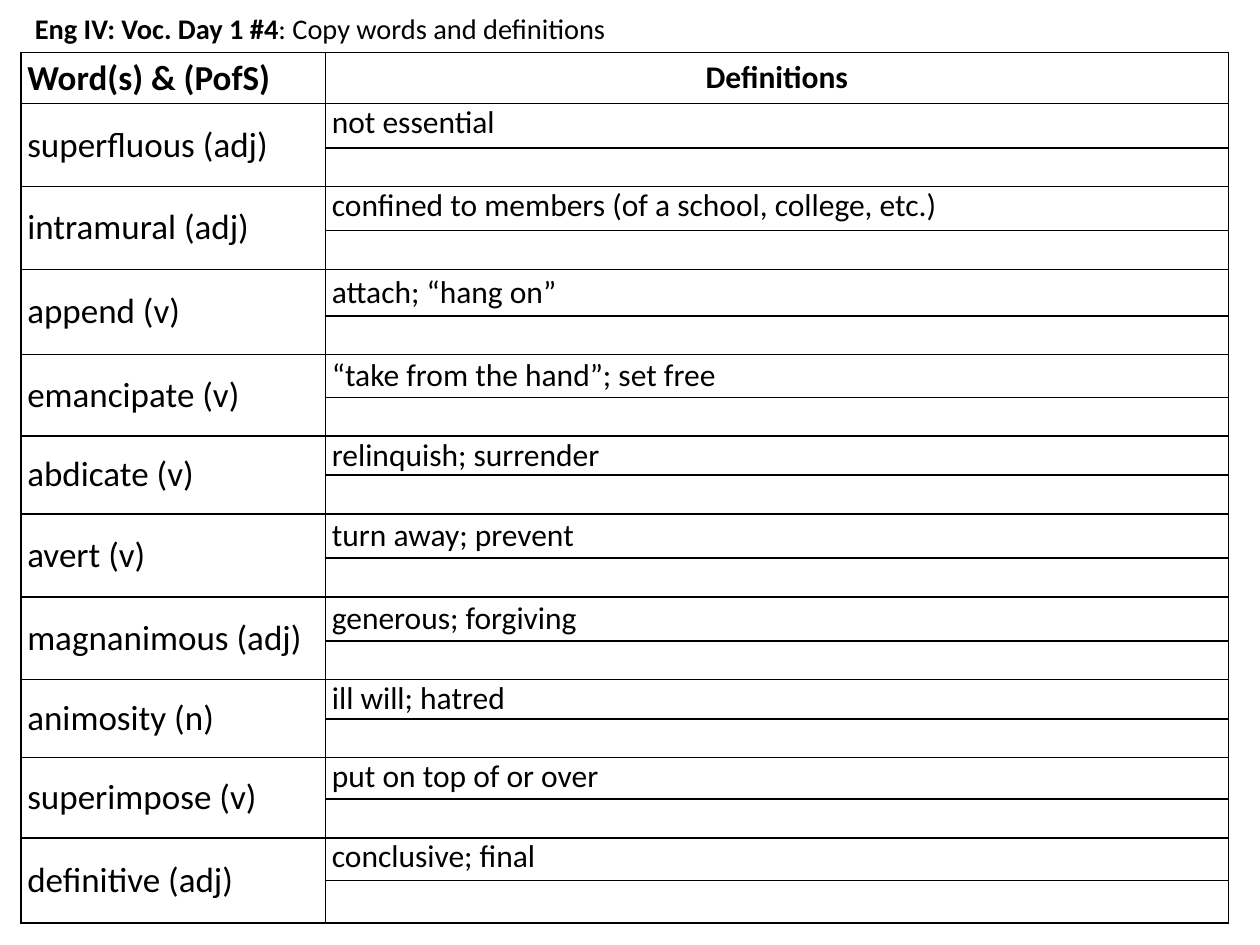
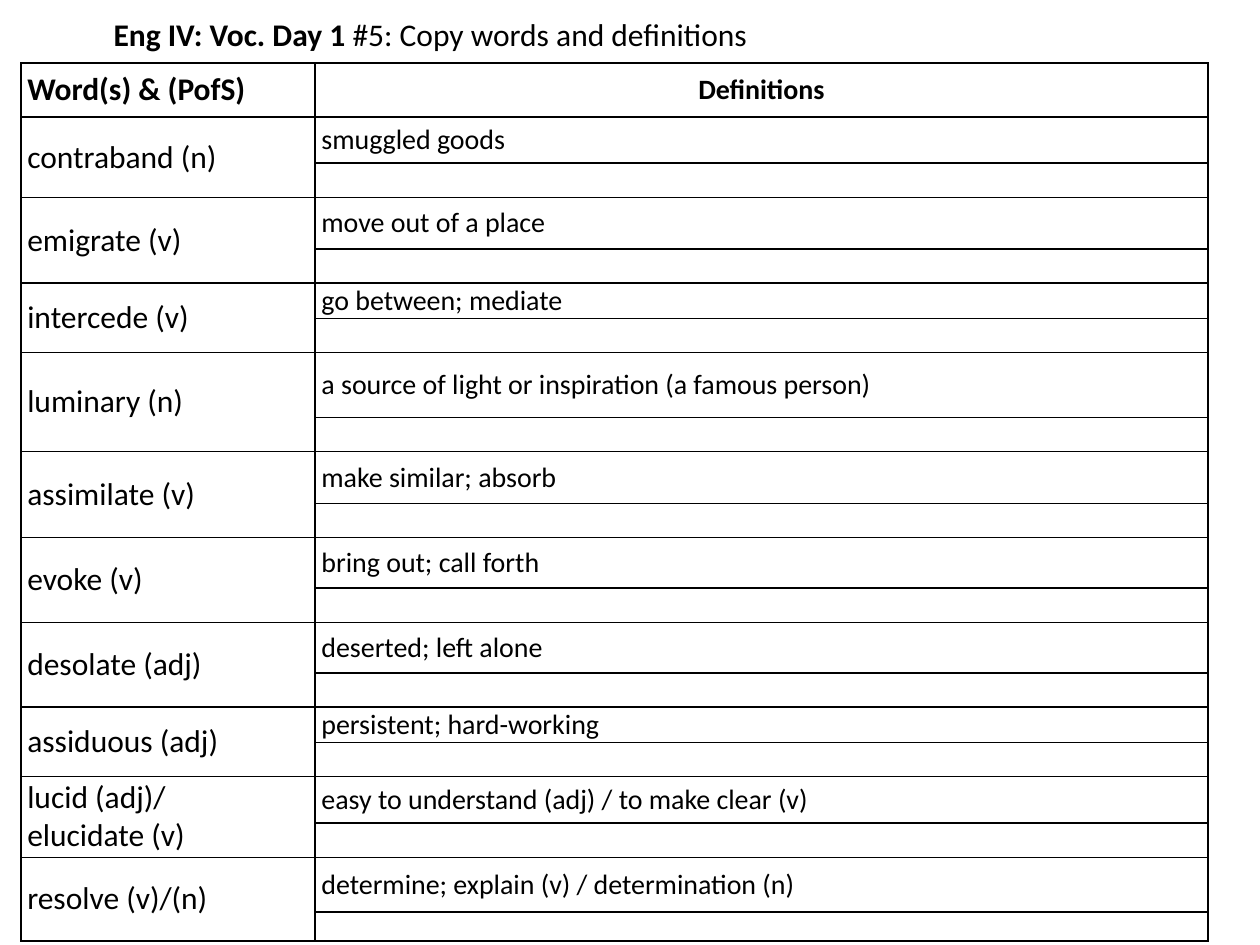
from dataclasses import dataclass

from lxml.etree import SubElement
from pptx import Presentation
from pptx.dml.color import RGBColor
from pptx.enum.text import MSO_ANCHOR, PP_ALIGN
from pptx.oxml.ns import qn
from pptx.presentation import Presentation as Deck
from pptx.slide import Slide
from pptx.table import Table, _Cell
from pptx.text.text import TextFrame
from pptx.util import Cm, Pt


@dataclass(frozen=True)
class Theme:
    font: str = "Calibri"
    ink: str = "000000"
    paper: str = "FFFFFF"
    border_pt: float = 1
    blank_pt: float = 12
    side_margin: float = 0.13


@dataclass(frozen=True)
class Entry:
    word: str
    definition: str
    height: float
    anchor: MSO_ANCHOR = MSO_ANCHOR.MIDDLE


@dataclass(frozen=True)
class Lesson:
    heading: str
    instruction: str
    heading_width: float
    heading_height: float
    heading_pt: float
    top: float
    word_width: float
    definition_width: float
    word_pt: float
    definition_pt: float
    header_height: float
    blank_height: float
    last_blank_height: float
    entries: tuple[Entry, ...]


THEME = Theme()
TABLE_LEFT = 0.42
TOP = MSO_ANCHOR.TOP

LESSONS = (
    Lesson(
        heading="Eng IV: Voc. Day 1 #4",
        instruction=": Copy words and definitions",
        heading_width=12.9,
        heading_height=1.14,
        heading_pt=16.2,
        top=1.06,
        word_width=6.14,
        definition_width=18.2,
        word_pt=20,
        definition_pt=18,
        header_height=1.03,
        blank_height=0.78,
        last_blank_height=0.86,
        entries=(
            Entry("superfluous (adj)", "not essential", 0.89, TOP),
            Entry("intramural (adj)", "confined to members (of a school, college, etc.)", 0.89, TOP),
            Entry("append (v)", "attach; “hang on”", 0.94),
            Entry("emancipate (v)", "“take from the hand”; set free", 0.86),
            Entry("abdicate (v)", "relinquish; surrender", 0.79),
            Entry("avert (v)", "turn away; prevent", 0.89),
            Entry("magnanimous (adj)", "generous; forgiving", 0.89),
            Entry("animosity (n)", "ill will; hatred", 0.79, TOP),
            Entry("superimpose (v)", "put on top of or over", 0.84, TOP),
            Entry("definitive (adj)", "conclusive; final", 0.86, TOP),
        ),
    ),
    Lesson(
        heading="Eng IV: Voc. Day 1",
        instruction=" #5: Copy words and definitions",
        heading_width=17.35,
        heading_height=1.35,
        heading_pt=18,
        top=1.27,
        word_width=5.93,
        definition_width=18,
        word_pt=18,
        definition_pt=16,
        header_height=1.09,
        blank_height=0.69,
        last_blank_height=0.59,
        entries=(
            Entry("contraband (n)", "smuggled goods", 0.93),
            Entry("emigrate (v)", "move out of a place", 1.04),
            Entry("intercede (v)", "go between; mediate", 0.71),
            Entry("luminary (n)", "a source of light or inspiration (a famous person)", 1.31),
            Entry("assimilate (v)", "make similar; absorb", 1.04),
            Entry("evoke (v)", "bring out; call forth", 1.02),
            Entry("desolate (adj)", "deserted; left alone", 1.02),
            Entry("assiduous (adj)", "persistent; hard-working", 0.71),
            Entry("lucid (adj)/\nelucidate (v)", "easy to understand (adj) / to make clear (v)", 0.94),
            Entry("resolve (v)/(n)", "determine; explain (v) / determination (n)", 1.1),
        ),
    ),
)


def write(
    frame: TextFrame,
    text: str,
    *,
    size: float,
    bold: bool = False,
    align: PP_ALIGN = PP_ALIGN.LEFT,
) -> None:
    for index, line in enumerate(text.split("\n")):
        paragraph = frame.add_paragraph() if index else frame.paragraphs[0]
        paragraph.alignment = align
        run = paragraph.add_run()
        run.text = line
        run.font.name = THEME.font
        run.font.size = Pt(size)
        run.font.bold = bold
        run.font.color.rgb = RGBColor.from_string(THEME.ink)


def prepare_cell(cell: _Cell) -> None:
    cell.margin_left = cell.margin_right = Cm(THEME.side_margin)
    cell.margin_top = cell.margin_bottom = Cm(0)
    cell.vertical_anchor = MSO_ANCHOR.MIDDLE
    properties = cell._tc.get_or_add_tcPr()
    for side in ("a:lnL", "a:lnR", "a:lnT", "a:lnB"):
        border = SubElement(properties, qn(side), w=str(Pt(THEME.border_pt)))
        SubElement(SubElement(border, qn("a:solidFill")), qn("a:srgbClr"), val=THEME.ink)
    cell.fill.background()


def shrink_blank(cell: _Cell) -> None:
    paragraph = cell.text_frame.paragraphs[0]._p
    SubElement(paragraph, qn("a:endParaRPr"), sz=str(int(THEME.blank_pt * 100)))


def add_heading(slide: Slide, lesson: Lesson) -> None:
    heading = slide.shapes.title
    heading.left, heading.top = Cm(0), Cm(0)
    heading.width, heading.height = Cm(lesson.heading_width), Cm(lesson.heading_height)
    frame = heading.text_frame
    frame.vertical_anchor = MSO_ANCHOR.MIDDLE
    for text, bold in ((lesson.heading, True), (lesson.instruction, False)):
        write(frame, text, size=lesson.heading_pt, bold=bold, align=PP_ALIGN.CENTER)


def fill_entry(vocabulary: Table, row: int, entry: Entry, lesson: Lesson) -> None:
    word, definition = vocabulary.cell(row, 0), vocabulary.cell(row, 1)
    for column in (0, 1):
        shrink_blank(vocabulary.cell(row + 1, column))
    word.merge(vocabulary.cell(row + 1, 0))
    write(word.text_frame, entry.word, size=lesson.word_pt)
    write(definition.text_frame, entry.definition, size=lesson.definition_pt)
    definition.vertical_anchor = entry.anchor


def add_vocabulary(slide: Slide, lesson: Lesson) -> None:
    heights = [lesson.header_height]
    for entry in lesson.entries:
        heights += [entry.height, lesson.blank_height]
    heights[-1] = lesson.last_blank_height
    widths = (lesson.word_width, lesson.definition_width)

    vocabulary = slide.shapes.add_table(
        len(heights), len(widths), Cm(TABLE_LEFT), Cm(lesson.top), Cm(sum(widths)), Cm(sum(heights))
    ).table
    vocabulary.first_row = vocabulary.horz_banding = False
    for column, width in zip(vocabulary.columns, widths):
        column.width = Cm(width)
    for row, height in zip(vocabulary.rows, heights):
        row.height = Cm(height)
    for cell in vocabulary.iter_cells():
        prepare_cell(cell)

    write(vocabulary.cell(0, 0).text_frame, "Word(s) & (PofS)", size=lesson.word_pt, bold=True)
    write(
        vocabulary.cell(0, 1).text_frame,
        "Definitions",
        size=lesson.definition_pt,
        bold=True,
        align=PP_ALIGN.CENTER,
    )
    for index, entry in enumerate(lesson.entries):
        fill_entry(vocabulary, 1 + 2 * index, entry, lesson)


def add_lesson(deck: Deck, lesson: Lesson) -> None:
    slide = deck.slides.add_slide(deck.slide_layouts.get_by_name("Title Only"))
    slide.background.fill.solid()
    slide.background.fill.fore_color.rgb = RGBColor.from_string(THEME.paper)
    add_heading(slide, lesson)
    add_vocabulary(slide, lesson)


def main() -> None:
    deck = Presentation()
    deck.slide_width, deck.slide_height = Cm(25.4), Cm(19.05)
    for lesson in LESSONS:
        add_lesson(deck, lesson)
    deck.save("out.pptx")


if __name__ == "__main__":
    main()
